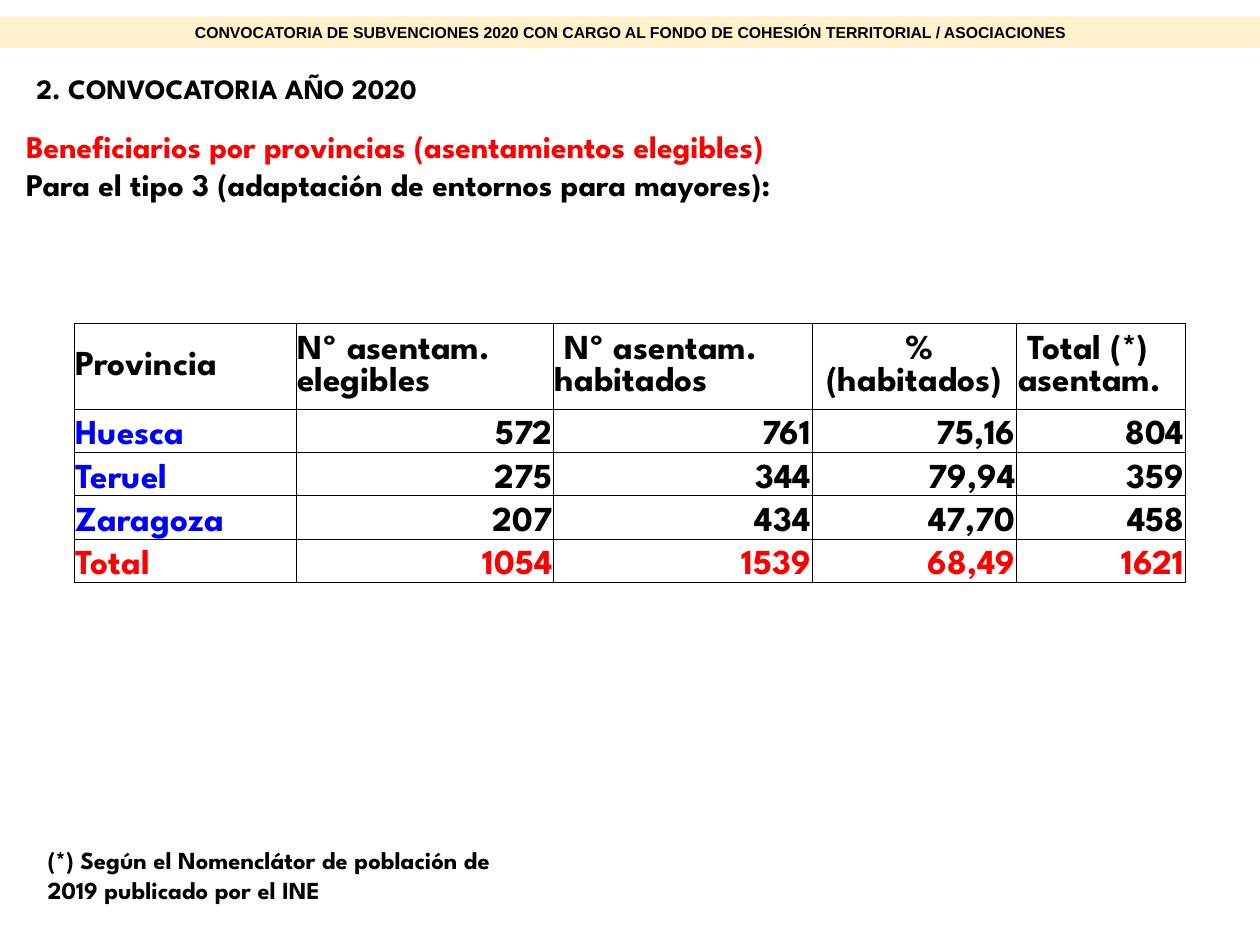
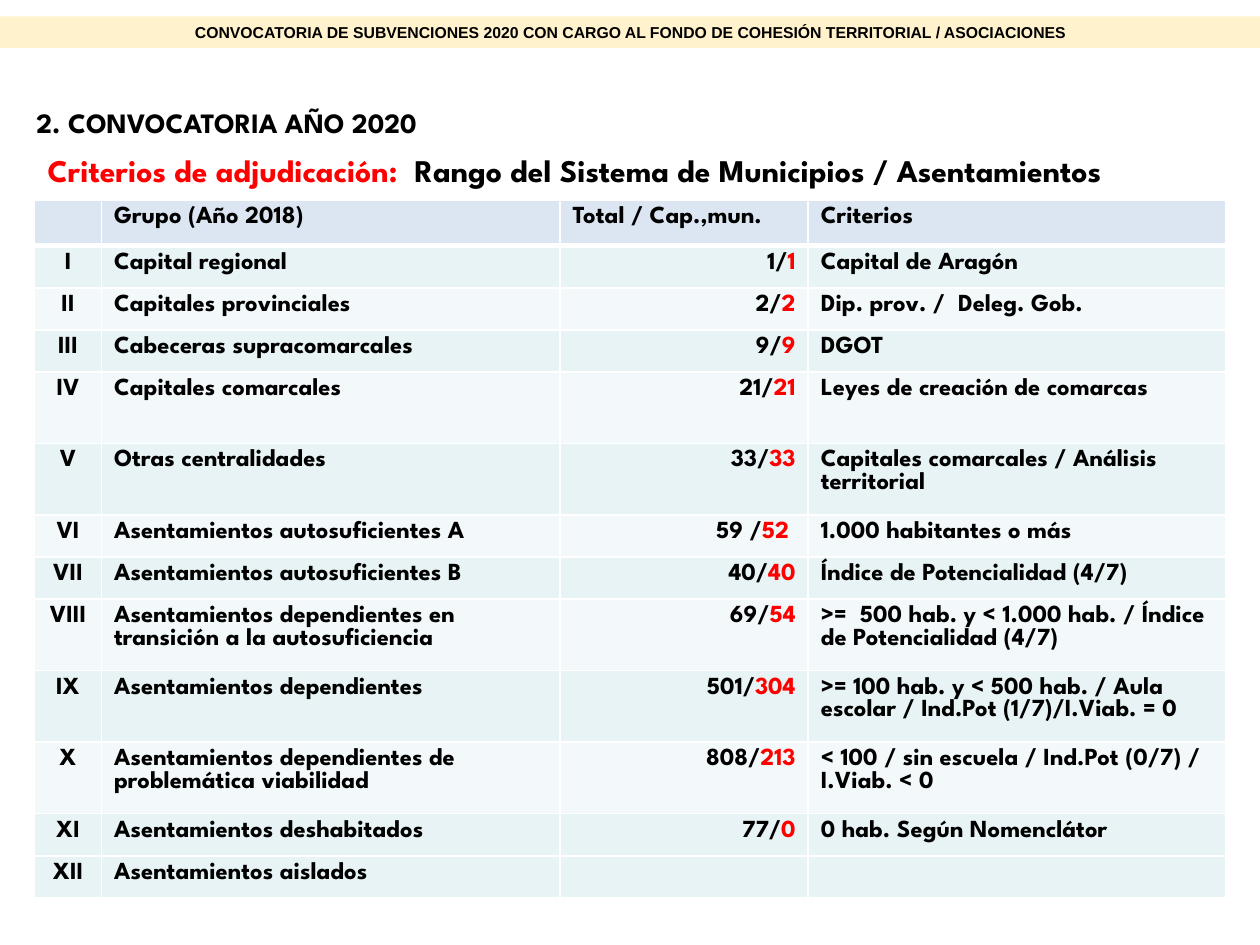
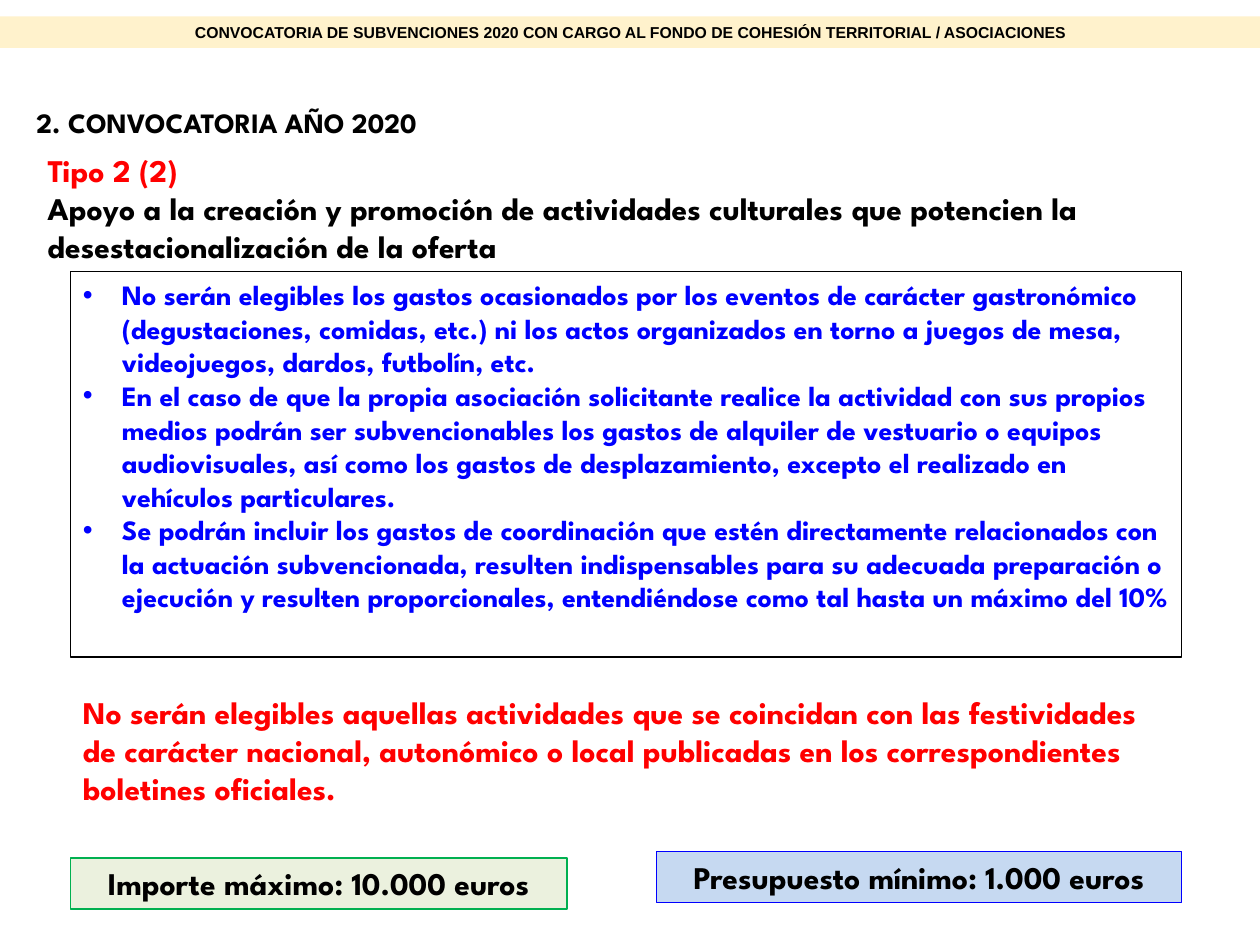
from dataclasses import dataclass

from lxml.etree import SubElement
from pptx import Presentation
from pptx.dml.color import RGBColor
from pptx.enum.shapes import MSO_SHAPE
from pptx.enum.text import MSO_ANCHOR, PP_ALIGN
from pptx.oxml import parse_xml
from pptx.oxml.ns import nsdecls, qn
from pptx.util import Inches, Pt


@dataclass(frozen=True)
class Theme:
    font: str = "League Spartan"
    band_font: str = "Arial"
    black: str = "000000"
    white: str = "FFFFFF"
    red: str = "FF0000"
    blue: str = "0000FF"
    green: str = "00B050"
    gold: str = "FFC000"
    pale_green: str = "EBF1DE"
    pale_blue: str = "C6D9F1"
    header: str = "DCE6F2"
    odd_row: str = "E7F3F4"
    even_row: str = "F3F9FA"
    band_size: int = 9
    small: int = 14
    body: int = 16
    lead: int = 18
    figures: int = 20


THEME = Theme()
COLUMNS, ROWS = 100, 75
SLIDE_WIDTH, SLIDE_HEIGHT = Inches(10), Inches(7.5)

BAND_TEXT = ("CONVOCATORIA DE SUBVENCIONES 2020 CON CARGO AL FONDO DE "
             "COHESIÓN TERRITORIAL / ASOCIACIONES")
SECTION_TITLE = "2. CONVOCATORIA AÑO 2020"

PROVINCE_HEADER = ["Provincia", "Nº asentam.\nelegibles", " Nº asentam.\nhabitados",
                   " %\n(habitados)", " Total (*)\nasentam."]
PROVINCES = [
    ("Huesca", "572", "761", "75,16", "804"),
    ("Teruel", "275", "344", "79,94", "359"),
    ("Zaragoza", "207", "434", "47,70", "458"),
    ("Total", "1054", "1539", "68,49", "1621"),
]

GROUP_HEADER = ("", "Grupo (Año 2018)", "Total / Cap.,mun.", "Criterios")
GROUPS = [
    ("I", "Capital regional", "1/", "1", "Capital de Aragón"),
    ("II", "Capitales provinciales", "2/", "2", "Dip. prov. /  Deleg. Gob."),
    ("III", "Cabeceras supracomarcales", "9/", "9", "DGOT"),
    ("IV", "Capitales comarcales", "21/", "21", "Leyes de creación de comarcas"),
    ("V", "Otras centralidades", "33/", "33",
     "Capitales comarcales / Análisis territorial"),
    ("VI", "Asentamientos autosuficientes A", "59 /", "52 ", "1.000 habitantes o más"),
    ("VII", "Asentamientos autosuficientes B", "40/", "40",
     "Índice de Potencialidad (4/7)"),
    ("VIII", "Asentamientos dependientes en transición a la autosuficiencia",
     "69/", "54", ">=  500 hab. y < 1.000 hab. / Índice de Potencialidad (4/7)"),
    ("IX", "Asentamientos dependientes", "501/", "304",
     ">= 100 hab. y < 500 hab. / Aula escolar / Ind.Pot (1/7)/I.Viab. = 0"),
    ("X", "Asentamientos dependientes de problemática viabilidad", "808/", "213",
     "< 100 / sin escuela / Ind.Pot (0/7) / I.Viab. < 0"),
    ("XI", "Asentamientos deshabitados", "77/", "0", "0 hab. Según Nomenclátor"),
    ("XII", "Asentamientos aislados", "", "", ""),
]
TALL_GROUPS = {"IV", "V", "VIII", "IX", "X"}

EXPENSE_RULES = [
    "No serán elegibles los gastos ocasionados por los eventos de carácter gastronómico "
    "(degustaciones, comidas, etc.) ni los actos organizados en torno a juegos de mesa, "
    "videojuegos, dardos, futbolín, etc.",
    "En el caso de que la propia asociación solicitante realice la actividad con sus propios "
    "medios podrán ser subvencionables los gastos de alquiler de vestuario o equipos "
    "audiovisuales, así como los gastos de desplazamiento, excepto el realizado en "
    "vehículos particulares.",
    "Se podrán incluir los gastos de coordinación que estén directamente relacionados con "
    "la actuación subvencionada, resulten indispensables para su adecuada preparación o "
    "ejecución y resulten proporcionales, entendiéndose como tal hasta un máximo del 10%",
]
HOLIDAY_RULE = ("No serán elegibles aquellas actividades que se coincidan con las "
                "festividades de carácter nacional, autonómico o local publicadas en los "
                "correspondientes boletines oficiales.")


def across(columns):
    return round(SLIDE_WIDTH * columns / COLUMNS)


def down(rows):
    return round(SLIDE_HEIGHT * rows / ROWS)


def place(box):
    left, top, width, height = box
    return across(left), down(top), across(width), down(height)


def rgb(color):
    return RGBColor.from_string(color)


def write(frame, paragraphs, size, align=PP_ALIGN.LEFT, font=THEME.font):
    for index, pieces in enumerate(paragraphs):
        paragraph = frame.paragraphs[0] if index == 0 else frame.add_paragraph()
        paragraph.alignment = align
        for words, color in pieces:
            run = paragraph.add_run()
            run.text = words
            run.font.name = font
            run.font.size = Pt(size)
            run.font.bold = True
            run.font.color.rgb = rgb(color)


def add_text(slide, box, paragraphs, size, align=PP_ALIGN.LEFT):
    frame = slide.shapes.add_textbox(*place(box)).text_frame
    frame.word_wrap = True
    write(frame, paragraphs, size, align)


def add_panel(slide, box, fill=None, line=None):
    panel = slide.shapes.add_shape(MSO_SHAPE.RECTANGLE, *place(box))
    panel.shadow.inherit = False
    if fill:
        panel.fill.solid()
        panel.fill.fore_color.rgb = rgb(fill)
    else:
        panel.fill.background()
    if line:
        panel.line.color.rgb = rgb(line)
        panel.line.width = Pt(0.75)
    else:
        panel.line.fill.background()
    panel.text_frame.word_wrap = True
    panel.text_frame.vertical_anchor = MSO_ANCHOR.TOP
    return panel


def add_band(slide, box):
    band = add_panel(slide, box, THEME.gold)
    tint = band.fill._xPr.find(qn("a:solidFill"))[0]
    SubElement(tint, qn("a:alpha"), val="20000")
    write(band.text_frame, [[(BAND_TEXT, THEME.black)]], THEME.band_size,
          PP_ALIGN.CENTER, THEME.band_font)


def add_section(deck, title_top):
    slide = deck.slides.add_slide(deck.slide_layouts[6])
    add_band(slide, (0, 1.3, COLUMNS, 2.5))
    add_text(slide, (1.9, title_top, 93.8, 3.7), [[(SECTION_TITLE, THEME.black)]],
             THEME.body, PP_ALIGN.JUSTIFY)
    return slide


def set_borders(cell, color, widths):
    properties = cell._tc.get_or_add_tcPr()
    for index, (side, width) in enumerate(zip("LRTB", widths)):
        border = parse_xml(
            f'<a:ln{side} {nsdecls("a")} w="{Pt(width)}"><a:solidFill>'
            f'<a:srgbClr val="{color}"/></a:solidFill></a:ln{side}>')
        properties.insert(index, border)


def add_grid(slide, box, column_widths, row_heights):
    grid = slide.shapes.add_table(len(row_heights), len(column_widths), *place(box)).table
    grid.first_row = grid.horz_banding = False
    for column, width in zip(grid.columns, column_widths):
        column.width = across(width)
    for row, height in zip(grid.rows, row_heights):
        row.height = down(height)
    return grid


def fill_cell(cell, paragraphs, size, align, fill=None):
    if fill:
        cell.fill.solid()
        cell.fill.fore_color.rgb = rgb(fill)
    else:
        cell.fill.background()
    write(cell.text_frame, paragraphs, size, align)
    if not cell.text_frame.text:
        SubElement(cell.text_frame.paragraphs[0]._p, qn("a:endParaRPr"), sz=str(size * 100))


def add_province_table(slide, box):
    height = box[3]
    row_height = height / (len(PROVINCES) + 2)
    grid = add_grid(slide, box, (17.6, 20.45, 20.5, 16.25, 13.4),
                    [2 * row_height] + [row_height] * len(PROVINCES))
    for r, record in enumerate([PROVINCE_HEADER, *PROVINCES]):
        for c, words in enumerate(record):
            cell = grid.cell(r, c)
            cell.margin_left = cell.margin_right = cell.margin_top = Inches(0.01)
            cell.margin_bottom = 0
            cell.vertical_anchor = MSO_ANCHOR.BOTTOM if r else MSO_ANCHOR.MIDDLE
            color, align = THEME.black, PP_ALIGN.LEFT
            if r == len(PROVINCES):
                color = THEME.red
            elif r and c == 0:
                color = THEME.blue
            if r and c:
                align = PP_ALIGN.RIGHT
            elif c == 3:
                align = PP_ALIGN.CENTER
            fill_cell(cell, [[(line, color)] for line in words.split("\n")],
                      THEME.figures, align)
            set_borders(cell, THEME.black, [0.5] * 4)


def add_group_table(slide, box):
    heights = [3.6] + [5.68 if group[0] in TALL_GROUPS else 3.33 for group in GROUPS]
    grid = add_grid(slide, box, (5.3, 36.4, 19.7, 33.1), heights)
    aligns = (PP_ALIGN.CENTER, PP_ALIGN.LEFT, PP_ALIGN.RIGHT, PP_ALIGN.LEFT)
    black, red = THEME.black, THEME.red
    rows = [[[(title, black)] if title else [] for title in GROUP_HEADER]]
    for rank, group, total, capitals, criteria in GROUPS:
        rows.append([
            [(rank, black)],
            [(group, black)],
            [(total, black), (capitals, red)] if total else [],
            [(criteria, black)] if criteria else [],
        ])
    for r, record in enumerate(rows):
        fill = THEME.odd_row if r % 2 or r == len(GROUPS) else THEME.even_row
        for c, pieces in enumerate(record):
            cell = grid.cell(r, c)
            fill_cell(cell, [pieces], THEME.small, aligns[c] if r else PP_ALIGN.LEFT,
                      fill if r else THEME.header)
            set_borders(cell, THEME.white, (1, 1, 3 if r == 1 else 1, 1 if r else 3))


def add_rules(slide, box):
    frame = add_panel(slide, box, line=THEME.black).text_frame
    write(frame, [[(rule, THEME.blue)] for rule in EXPENSE_RULES], THEME.body)
    for paragraph in frame.paragraphs:
        properties = paragraph._p.get_or_add_pPr()
        properties.set("marL", str(Inches(0.31)))
        properties.set("indent", str(-Inches(0.31)))
        SubElement(properties, qn("a:buFont"), typeface=THEME.band_font)
        SubElement(properties, qn("a:buChar"), char="•")


def add_amount(slide, box, words, fill, line):
    frame = add_panel(slide, box, fill, line).text_frame
    write(frame, [[(words, THEME.black)]], THEME.lead, PP_ALIGN.CENTER)


def build_provinces(deck):
    slide = add_section(deck, 5.2)
    add_text(slide, (1.1, 9.6, 95.3, 7.1), [
        [("Beneficiarios por provincias (asentamientos elegibles)", THEME.red)],
        [("Para el tipo 3 (adaptación de entornos para mayores):", THEME.black)],
    ], THEME.lead)
    add_province_table(slide, (5.9, 25.65, 88.2, 20.5))
    add_text(slide, (2.8, 66.6, 39.4, 5.7), [
        [("(*) Según el Nomenclátor de población de 2019 publicado por el INE",
          THEME.black)],
    ], THEME.small)


def build_criteria(deck):
    slide = add_section(deck, 7.9)
    add_text(slide, (2.8, 11.5, 96.2, 4), [[
        ("Criterios de adjudicación:  ", THEME.red),
        ("Rango del Sistema de Municipios / Asentamientos", THEME.black),
    ]], THEME.lead)
    add_group_table(slide, (2.75, 15.9, 94.5, 55.3))


def build_culture(deck):
    slide = add_section(deck, 7.9)
    add_text(slide, (2.8, 11.5, 96.2, 10.1), [
        [("Tipo 2 (2)", THEME.red)],
        [("Apoyo a la creación y promoción de actividades culturales que potencien la "
          "desestacionalización de la oferta", THEME.black)],
    ], THEME.lead)
    add_rules(slide, (5.6, 21.55, 88.2, 30.6))
    add_text(slide, (5.6, 54.5, 88.2, 10.1), [[(HOLIDAY_RULE, THEME.red)]], THEME.lead)
    add_amount(slide, (5.6, 68.1, 39.4, 4.05), "Importe máximo: 10.000 euros",
               THEME.pale_green, THEME.green)
    add_amount(slide, (52.1, 67.6, 41.7, 4.05), "Presupuesto mínimo: 1.000 euros",
               THEME.pale_blue, THEME.blue)


def main():
    deck = Presentation()
    deck.slide_width, deck.slide_height = SLIDE_WIDTH, SLIDE_HEIGHT
    for build in (build_provinces, build_criteria, build_culture):
        build(deck)
    deck.save("out.pptx")


if __name__ == "__main__":
    main()
